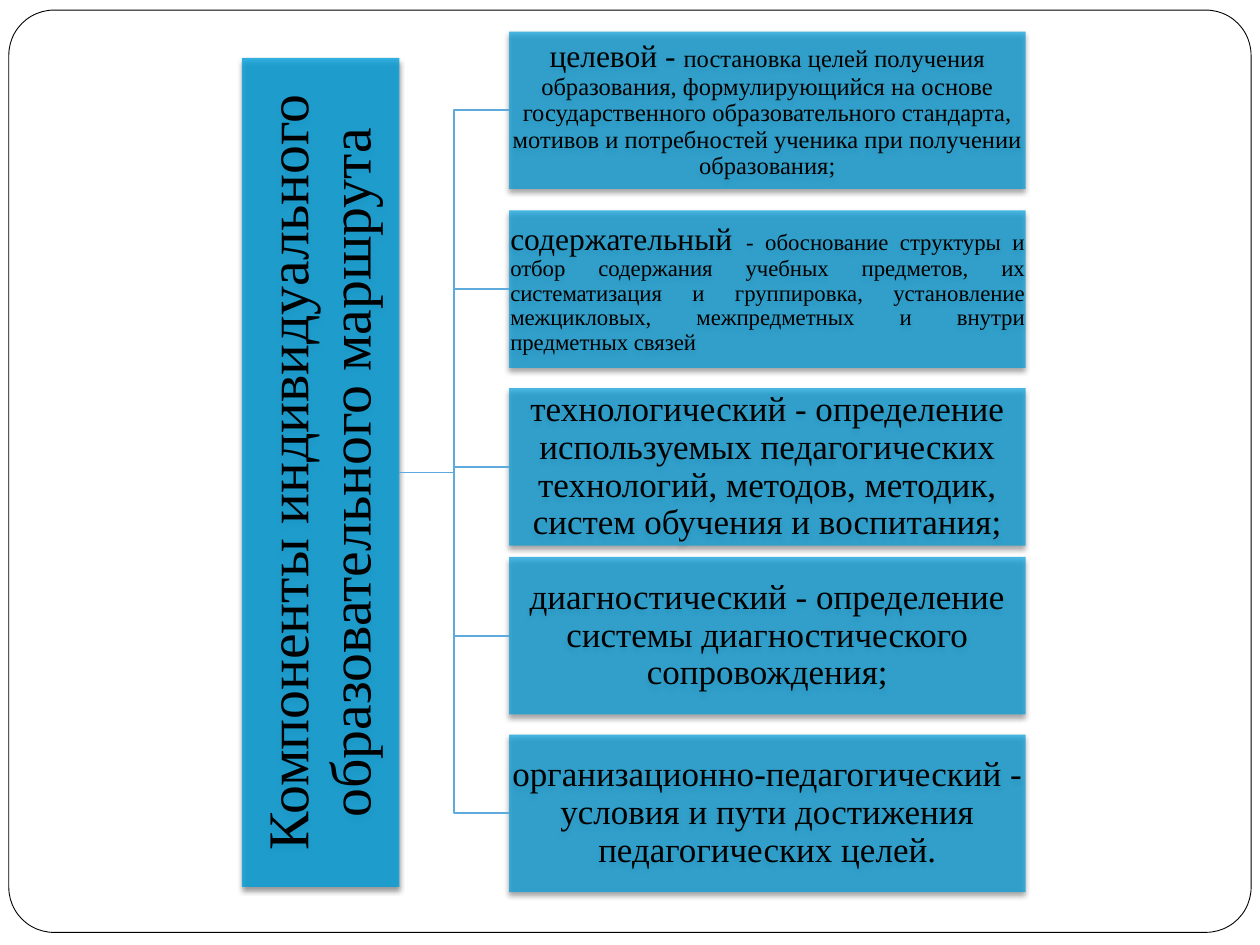
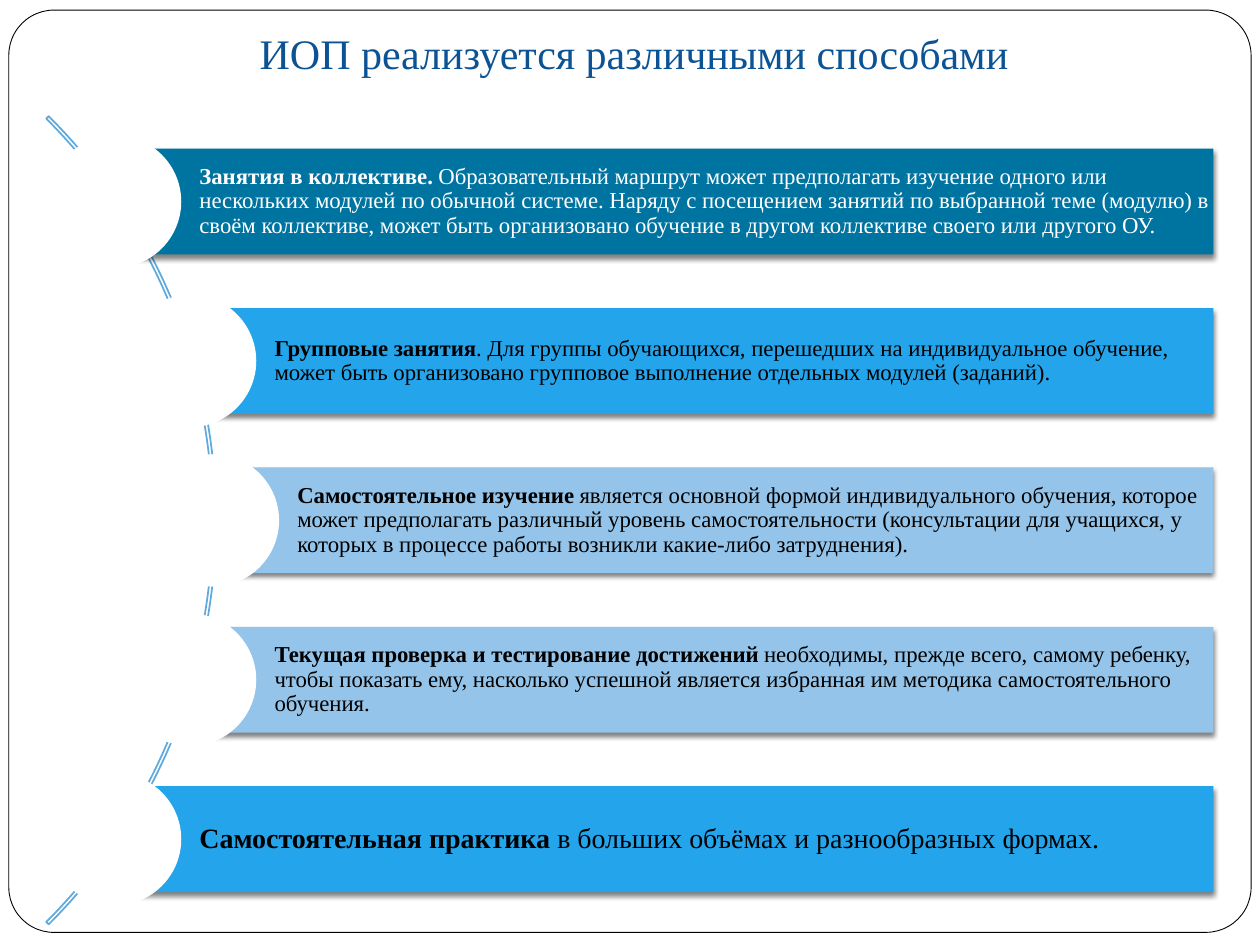
import math

from lxml import etree
from pptx import Presentation
from pptx import util as u
from pptx.dml.color import RGBColor
from pptx.enum import shapes, text
from pptx.oxml import ns

W, H = 10, 7.5
FONT = "Times New Roman"
COLORS = {
    "white": "FFFFFF", "black": "000000", "title": "0B5394", "line": "5EAADD",
    "box": "009DD9", "dark": "0074A1", "bright": "24A4EB", "pale": "94C4E9",
}
CENTER, LEFT, JUSTIFY = text.PP_ALIGN.CENTER, text.PP_ALIGN.LEFT, text.PP_ALIGN.JUSTIFY


def add_box(s, kind, x, y, w, h, fill=None, line=None, alpha=None, shadow=False):
    """Preset shape placed in inches; alpha in percent, line as (colour, points)."""
    sp = s.shapes.add_shape(kind, *map(u.Inches, (x, y, w, h)))
    sp.shadow.inherit = False
    if fill:
        sp.fill.solid()
        sp.fill.fore_color.rgb = RGBColor.from_string(COLORS[fill])
    else:
        sp.fill.background()
    if alpha:
        color = sp.element.spPr.find(".//" + ns.qn("a:srgbClr"))
        etree.SubElement(color, ns.qn("a:alpha"), val=str(alpha * 1000))
    if line:
        sp.line.color.rgb = RGBColor.from_string(COLORS[line[0]])
        sp.line.width = u.Pt(line[1])
    else:
        sp.line.fill.background()
    if shadow:
        effects = sp.element.spPr.find(ns.qn("a:effectLst"))
        outer = etree.SubElement(
            effects, ns.qn("a:outerShdw"), blurRad=str(u.Pt(3)), dist=str(u.Pt(2)),
            dir="5400000", rotWithShape="0")
        color = etree.SubElement(outer, ns.qn("a:srgbClr"), val=COLORS["black"])
        etree.SubElement(color, ns.qn("a:alpha"), val="50000")
    return sp


def write(sp, runs, color, align, margins=None, spacing=0.9, anchor=text.MSO_ANCHOR.MIDDLE):
    """Fill one paragraph with runs of (text, size, bold)."""
    tf = sp.text_frame
    tf.word_wrap = True
    tf.auto_size = text.MSO_AUTO_SIZE.NONE
    tf.vertical_anchor = anchor
    if margins:
        tf.margin_left, tf.margin_top, tf.margin_right, tf.margin_bottom = map(u.Inches, margins)
    p = tf.paragraphs[0]
    p.alignment = align
    p.line_spacing = spacing
    for words, size, bold in runs:
        r = p.add_run()
        r.text = words
        r.font.name = FONT
        r.font.size = u.Pt(size)
        r.font.bold = bold
        r.font.color.rgb = RGBColor.from_string(COLORS[color])


prs = Presentation()
prs.slide_width, prs.slide_height = u.Inches(W), u.Inches(H)
RECT = shapes.MSO_SHAPE.RECTANGLE

# Slide 1: components of the route
s = prs.slides.add_slide(prs.slide_layouts[6])

# Rounded frame, moved to the master so that both slides share it
frame = add_box(s, shapes.MSO_SHAPE.ROUNDED_RECTANGLE, 0.07, 0.08, 9.86, 7.32,
                "white", ("black", 0.5))
frame.adjustments[0] = 0.049
frame.element.nvSpPr.cNvPr.set("id", "100")
prs.slide_master.shapes.element.insert(2, frame.element)

# Root bar with upward text
BOX_H = H / 6
root = add_box(s, RECT, 1.92, 0.46, BOX_H, 6.58, "box", alpha=80, shadow=True)
write(root, [("Компоненты индивидуального образовательного маршрута", 33, False)],
      "black", CENTER, [0.02] * 4)
root.text_frame._txBody.bodyPr.set("vert", "vert270")

# Component boxes, each joined to the root
components = [
    (0.25, CENTER, [
        ("целевой - ", 18, False),
        ("постановка целей получения образования, формулирующийся на основе "
         "государственного образовательного стандарта, мотивов и потребностей ученика "
         "при получении образования;", 14, False)]),
    (1.67, JUSTIFY, [
        ("содержательный ", 18, False),
        ("- обоснование структуры и отбор содержания учебных предметов, их систематизация "
         "и группировка, установление межцикловых, межпредметных и внутри предметных "
         "связей", 13, False)]),
    (3.08, CENTER, [
        ("технологический - определение используемых педагогических технологий, методов, "
         "методик, систем обучения и воспитания;", 20, False)]),
    (4.42, CENTER, [
        ("диагностический - определение системы диагностического сопровождения;", 20, False)]),
    (5.83, CENTER, [
        ("организационно-педагогический - условия и пути достижения педагогических "
         "целей.", 20, False)]),
]
for top, align, runs in components:
    box = add_box(s, RECT, 4.04, top, 4.1, BOX_H, "box", alpha=70, shadow=True)
    write(box, runs, "black", align, [0.01] * 4)
    link = s.shapes.add_connector(shapes.MSO_CONNECTOR.ELBOW, 0, 0, 0, 0)
    link.begin_connect(root, 3)
    link.end_connect(box, 1)
    link.line.color.rgb = RGBColor.from_string(COLORS["line"])
    link.line.width = u.Pt(1)
    etree.SubElement(link.element.spPr, ns.qn("a:effectLst"))

# Slide 2: ways of carrying out the programme
s = prs.slides.add_slide(prs.slide_layouts[5])
title = s.shapes.title
title.left, title.top, title.width, title.height = map(u.Inches, (0.35, 0.17, 9.45, 0.5))
write(title, [("ИОП реализуется различными способами ", 24, False)], "title", CENTER,
      spacing=1, anchor=text.MSO_ANCHOR.TOP)

# Large thin arc behind the bands
ARC_X, ARC_Y, ARC_D = -2.82, 4.13, 9.07
arc = add_box(s, shapes.MSO_SHAPE.BLOCK_ARC, ARC_X - ARC_D / 2, ARC_Y - ARC_D / 2,
              ARC_D, ARC_D, line=("line", 1))
for i, value in enumerate((189, 27, 0.003)):
    arc.adjustments[i] = value

# Bands start on a circle just inside the arc
RADIUS, PITCH, BAND_H, BAND_RIGHT, DISC = 4.51, 1.265, 0.84, 9.63, 1.05
bands = [
    ("dark", "white", 13, "Занятия в коллективе. ",
     "Образовательный маршрут может предполагать изучение одного или нескольких модулей "
     "по обычной системе. Наряду с посещением занятий по выбранной теме (модулю) в своём "
     "коллективе, может быть организовано обучение в другом коллективе своего или другого ОУ."),
    ("bright", "black", 13, "Групповые занятия",
     ". Для группы обучающихся, перешедших на индивидуальное обучение, может быть "
     "организовано групповое выполнение отдельных модулей (заданий)."),
    ("pale", "black", 13, "Самостоятельное изучение ",
     "является основной формой индивидуального обучения, которое может предполагать "
     "различный уровень самостоятельности (консультации для учащихся, у которых в процессе "
     "работы возникли какие-либо затруднения)."),
    ("pale", "black", 13, "Текущая проверка и тестирование достижений ",
     "необходимы, прежде всего, самому ребенку, чтобы показать ему, насколько успешной "
     "является избранная им методика самостоятельного обучения."),
    ("bright", "black", 16, "Самостоятельная практика ",
     "в больших объёмах и разнообразных формах."),
]
for i, (fill, color, size, head, body) in enumerate(bands):
    dy = (i - 2) * PITCH
    x, y = ARC_X + math.sqrt(RADIUS ** 2 - dy ** 2), ARC_Y + dy
    band = add_box(s, RECT, x, y - BAND_H / 2, BAND_RIGHT - x, BAND_H, fill, shadow=True)
    write(band, [(head, size, True), (body, size, False)], color, LEFT,
          [0.67, 0.04, 0.04, 0.04])
    add_box(s, shapes.MSO_SHAPE.OVAL, x - DISC / 2, y - DISC / 2, DISC, DISC, "white")

prs.save("out.pptx")
